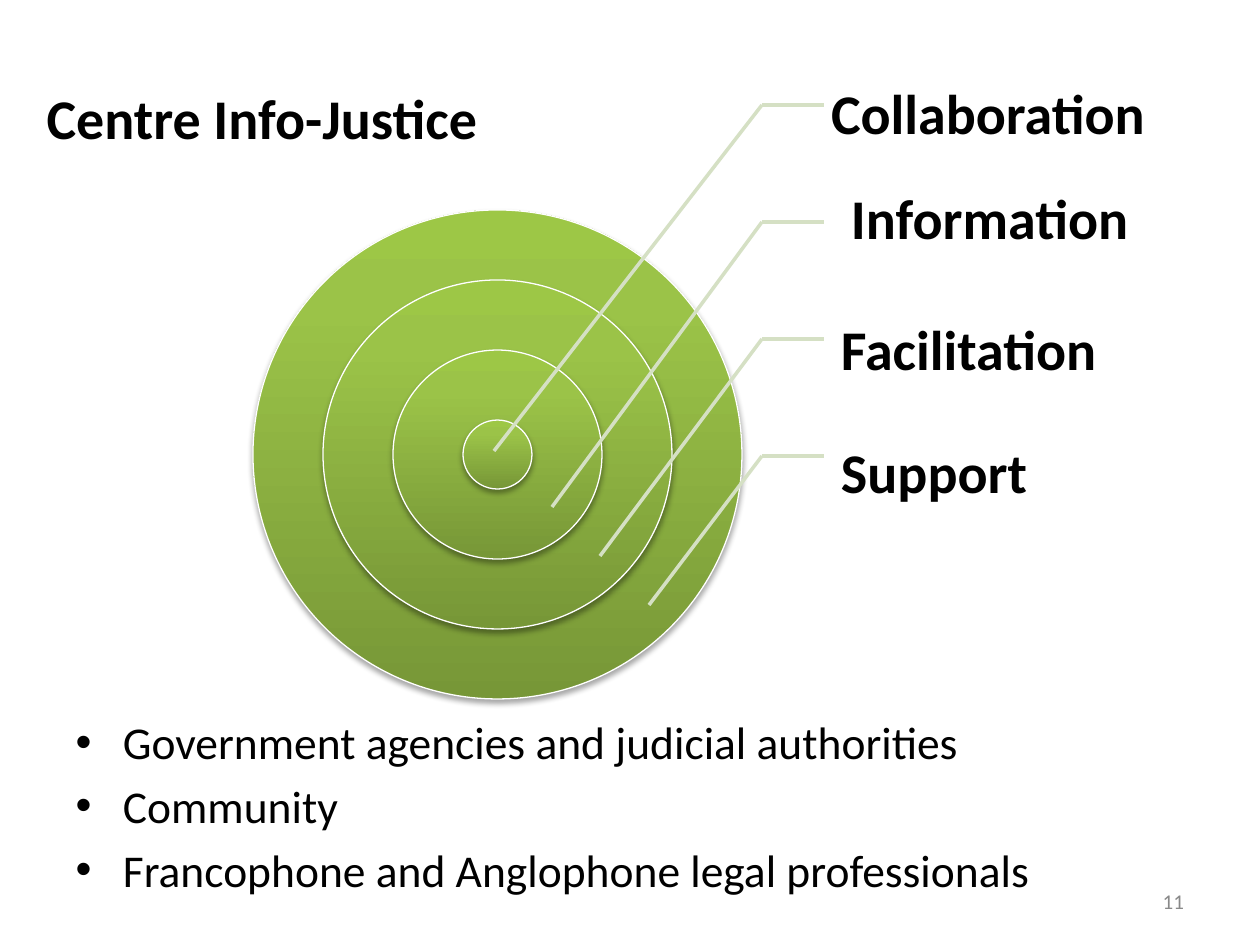
"""Build the Centre Info-Justice slide with its concentric service circles."""
from lxml import etree
from pptx import Presentation
from pptx.dml.color import RGBColor
from pptx.enum.shapes import MSO_CONNECTOR, MSO_SHAPE
from pptx.enum.text import MSO_ANCHOR, MSO_AUTO_SIZE, PP_ALIGN
from pptx.oxml import parse_xml
from pptx.oxml.ns import nsdecls, qn
from pptx.util import Pt

PX = 914400 / 126
BLACK = RGBColor(0x00, 0x00, 0x00)
WHITE = RGBColor(0xFF, 0xFF, 0xFF)
GREY = RGBColor(0x89, 0x89, 0x89)
PALE_GREEN = RGBColor(0xD5, 0xE0, 0xC4)
DARK_GREEN = RGBColor(0x77, 0x97, 0x37)
MID_GREEN = RGBColor(0x9B, 0xC3, 0x48)
LIGHT_GREEN = RGBColor(0x9D, 0xC7, 0x46)
GREEN_STOPS = ((0, DARK_GREEN), (80, MID_GREEN), (100, LIGHT_GREEN))

LEFT, RIGHT = PP_ALIGN.LEFT, PP_ALIGN.RIGHT
TOP, MIDDLE = MSO_ANCHOR.TOP, MSO_ANCHOR.MIDDLE
NO_FIT = MSO_AUTO_SIZE.NONE
OVAL = MSO_SHAPE.OVAL
STRAIGHT = MSO_CONNECTOR.STRAIGHT

SERVICES = (
    ("Collaboration", (799, 58, 398, 117), (494, 451)),
    ("Information", (819, 163, 349, 117), (552, 507)),
    ("Facilitation", (809, 294, 407, 117), (600, 556)),
    ("Support", (809, 417, 396, 117), (649, 605)),
)
PARTNERS = (
    "Government agencies and judicial authorities",
    "Community",
    "Francophone and Anglophone legal professionals",
)


def emu(*lengths):
    return [round(length * PX) for length in lengths]


def write(frame, *lines, size, color=BLACK, bold=False, align=LEFT,
          anchor=MIDDLE, spacing=None):
    frame.word_wrap = True
    frame.auto_size = NO_FIT
    frame.vertical_anchor = anchor
    for index, line in enumerate(lines):
        paragraph = frame.add_paragraph() if index else frame.paragraphs[0]
        paragraph.alignment = align
        if spacing:
            paragraph.line_spacing = spacing
        run = paragraph.add_run()
        run.text = line
        run.font.name = "Calibri"
        run.font.size = Pt(size)
        run.font.bold = bold
        run.font.color.rgb = color


class ServiceSlide:
    def __init__(self, slide):
        self.slide = slide

    def placeholder(self, index, box, *lines, **style):
        holder = self.slide.placeholders[index]
        holder.left, holder.top, holder.width, holder.height = emu(*box)
        write(holder.text_frame, *lines, **style)

    def label(self, text, box, margins=(13, 6, 13, 6), **style):
        frame = self.slide.shapes.add_textbox(*emu(*box)).text_frame
        (frame.margin_left, frame.margin_top,
         frame.margin_right, frame.margin_bottom) = emu(*margins)
        write(frame, text, **style)

    def circle(self, left, top, diameter):
        disc = self.slide.shapes.add_shape(
            OVAL, *emu(left, top, diameter, diameter))
        disc.line.color.rgb = WHITE
        disc.line.width = Pt(0.75)
        disc.shadow.inherit = False
        disc.fill.gradient()
        properties = disc.element.spPr
        stops = "".join(
            f'<a:gs pos="{percent * 1000}"><a:srgbClr val="{color}"/></a:gs>'
            for percent, color in GREEN_STOPS)
        properties.replace(properties.find(qn("a:gradFill")), parse_xml(
            f'<a:gradFill {nsdecls("a")} rotWithShape="1">'
            f'<a:gsLst>{stops}</a:gsLst>'
            '<a:lin ang="16200000" scaled="0"/></a:gradFill>'))
        properties.find(qn("a:effectLst")).append(parse_xml(
            f'<a:outerShdw {nsdecls("a")} blurRad="{Pt(3.1)}" '
            f'dist="{Pt(1.8)}" dir="5400000" rotWithShape="0">'
            '<a:srgbClr val="000000"><a:alpha val="35000"/></a:srgbClr>'
            '</a:outerShdw>'))

    def line(self, start, end):
        connector = self.slide.shapes.add_connector(
            STRAIGHT, *emu(*start, *end))
        connector.line.color.rgb = PALE_GREEN
        connector.line.width = Pt(2)
        etree.SubElement(connector.element.spPr, qn("a:effectLst"))


def main():
    deck = Presentation()
    deck.slide_width, deck.slide_height = emu(1260, 945)
    page = ServiceSlide(deck.slides.add_slide(deck.slide_layouts[1]))

    page.placeholder(0, (34, 38, 625, 158), "Centre Info-Justice",
                     size=32, bold=True)
    page.placeholder(1, (63, 708, 1143, 212), *PARTNERS, size=26, anchor=TOP)

    for ring in range(len(SERVICES)):
        page.circle(253 + 70 * ring, 210 + 70 * ring, 489 - 140 * ring)

    for row, (service, box, target) in enumerate(SERVICES):
        elbow = (762, 105 + 117 * row)
        page.label(service, box, margins=(32, 5, 5, 5),
                   size=32, bold=True, spacing=0.9)
        page.line(elbow, (824, elbow[1]))
        page.line(elbow, target)

    page.label("11", (903, 876, 294, 50), size=12, color=GREY, align=RIGHT)
    deck.save("out.pptx")


if __name__ == "__main__":
    main()
